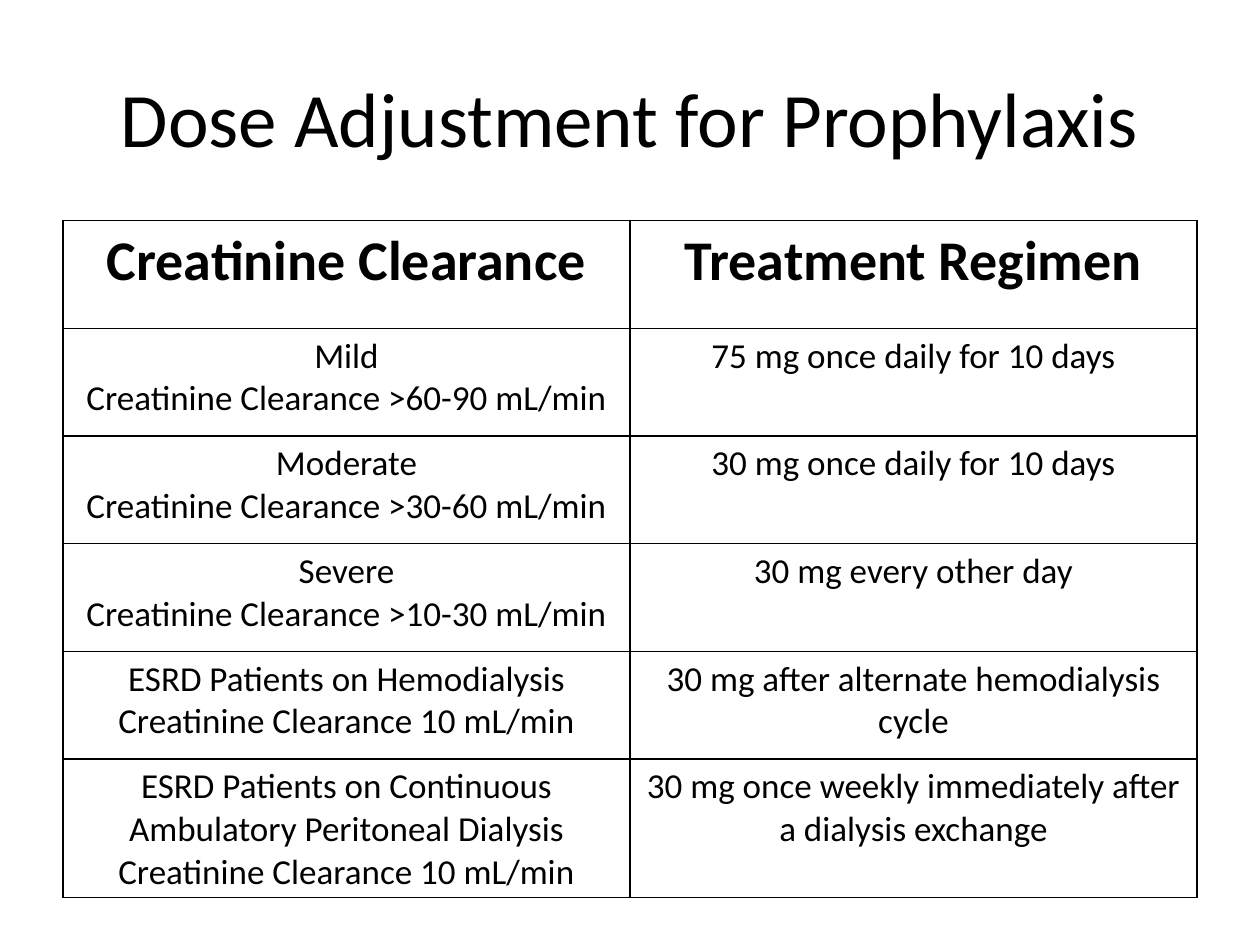
from lxml import etree
from pptx import Presentation
from pptx.dml.color import RGBColor
from pptx.enum.text import MSO_ANCHOR, PP_ALIGN
from pptx.oxml.ns import qn
from pptx.util import Cm, Pt

BLACK = RGBColor(0x00, 0x00, 0x00)
WHITE = RGBColor(0xFF, 0xFF, 0xFF)
CENTER = PP_ALIGN.CENTER
MIDDLE = MSO_ANCHOR.MIDDLE
TOP = MSO_ANCHOR.TOP

ROWS = [
    ("Creatinine Clearance", "Treatment Regimen"),
    ("Mild\nCreatinine Clearance >60-90 mL/min", "75 mg once daily for 10 days"),
    ("Moderate\nCreatinine Clearance >30-60 mL/min", "30 mg once daily for 10 days"),
    ("Severe\nCreatinine Clearance >10-30 mL/min", "30 mg every other day"),
    ("ESRD Patients on Hemodialysis\nCreatinine Clearance 10 mL/min",
     "30 mg after alternate hemodialysis cycle"),
    ("ESRD Patients on Continuous Ambulatory Peritoneal Dialysis\nCreatinine Clearance 10 mL/min",
     "30 mg once weekly immediately after a dialysis exchange"),
]


def write(frame, text, size=20, bold=False, anchor=TOP):
    frame.word_wrap = True
    frame.vertical_anchor = anchor
    para = frame.paragraphs[0]
    para.text = text
    para.alignment = CENTER
    for run in para.runs:
        run.font.name = "Calibri"
        run.font.size = Pt(size)
        run.font.bold = bold
        run.font.color.rgb = BLACK


def border(cell):
    props = cell._tc.get_or_add_tcPr()
    for spot, side in enumerate(("a:lnL", "a:lnR", "a:lnT", "a:lnB")):
        line = etree.Element(qn(side), w=str(Pt(1)))
        fill = etree.SubElement(line, qn("a:solidFill"))
        etree.SubElement(fill, qn("a:srgbClr"), val=str(BLACK))
        props.insert(spot, line)


deck = Presentation()
deck.slide_width = Cm(25.4)
deck.slide_height = Cm(19.05)
slide = deck.slides.add_slide(deck.slide_layouts[6])

title = slide.shapes.add_textbox(Cm(1.27), Cm(0.76), Cm(22.86), Cm(3.18))
write(title.text_frame, "Dose Adjustment for Prophylaxis", size=44, anchor=MIDDLE)

high = Cm(2.17)
table = slide.shapes.add_table(
    len(ROWS), 2, Cm(1.27), Cm(4.45), Cm(22.86), high * len(ROWS)).table
table.horz_banding = False
for r, row in enumerate(ROWS):
    table.rows[r].height = high
    for c, text in enumerate(row):
        cell = table.cell(r, c)
        cell.fill.solid()
        cell.fill.fore_color.rgb = WHITE
        border(cell)
        write(cell.text_frame, text, size=20 if r else 32, bold=r == 0)

deck.save("out.pptx")
